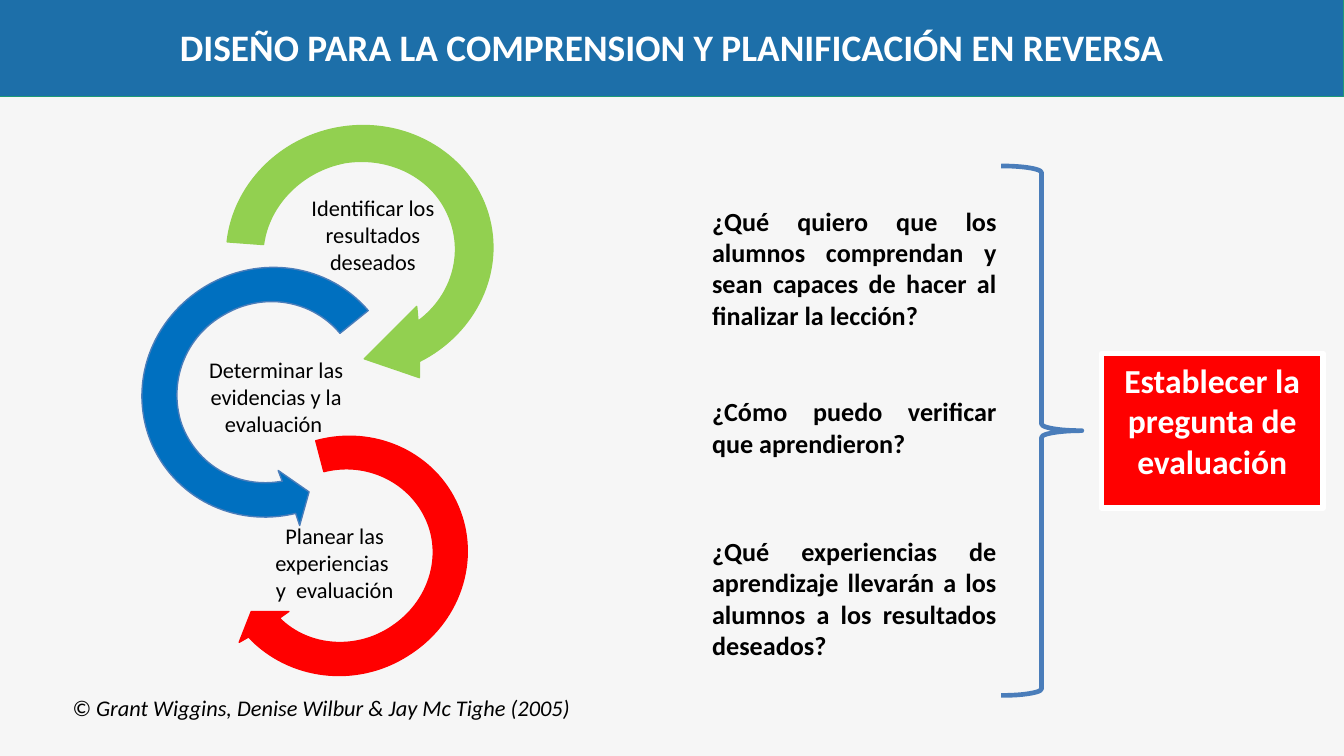
"""Build the slide on backward design: three linked arrows, their questions and the evaluation prompt."""
from dataclasses import dataclass
from math import cos, radians, sin

from lxml.etree import SubElement
from pptx import Presentation
from pptx.dml.color import RGBColor
from pptx.enum.shapes import MSO_SHAPE
from pptx.enum.text import MSO_ANCHOR, PP_ALIGN
from pptx.oxml.ns import qn
from pptx.util import Inches, Pt


@dataclass(frozen=True)
class Theme:
    font: str = "Calibri"
    background: str = "F6F6F6"
    ink: str = "000000"
    white: str = "FFFFFF"
    green: str = "92D050"
    blue: str = "0070C0"
    red: str = "FF0000"
    outline: str = "4A7DBA"
    header: str = "1D6FA9"
    header_edge: str = "1D9A78"
    small: int = 12
    medium: int = 14
    large: int = 18
    title: int = 20


THEME = Theme()
CELL = Inches(0.1)
COLUMNS, ROWS = 100, 56.25

TITLE = "DISEÑO PARA LA COMPRENSION Y PLANIFICACIÓN EN REVERSA"
PROMPT = "Establecer la pregunta de evaluación"
CREDIT = "© Grant Wiggins, Denise Wilbur & Jay Mc Tighe (2005)"
STAGES = [
    ("Identificar los resultados deseados", (21, 13.95, 13.5, 7.5)),
    ("Determinar las evidencias y la evaluación ", (13.8, 26, 13.5, 6.8)),
    ("Planear las experiencias  y  evaluación ", (19.4, 38.35, 11, 8.2)),
]
QUESTION_LEFT, QUESTION_WIDTH = 52, 23.15
QUESTIONS = [
    ("¿Qué quiero que los alumnos comprendan y sean capaces de hacer al finalizar la lección?", 14.75, 9.8),
    ("¿Cómo puedo verificar que aprendieron?", 28.95, 5.3),
    ("¿Qué experiencias de aprendizaje llevarán a los alumnos a los resultados deseados?", 39.35, 9.8),
]
# Pairs are corners; six numbers are two curve handles and an end point.
GREEN_ARROW = (THEME.green, THEME.green, (16.1, 7.4, 21.2, 22.6), 76.6, [
    (16.9, 18), (17.4, 13.5, 21.2, 9.9, 25.9, 9.4), (30.6, 8.9, 35, 11.6, 36.3, 15.9),
    (37.6, 20.2, 35.4, 24.8, 31.2, 26.9), (31.2, 28.1), (27.1, 26.7), (31, 22.8), (31.1, 23.9),
    (33.7, 22, 34.6, 18.7, 33.3, 15.9), (32.1, 13.2, 29, 11.6, 25.7, 12.1),
    (22.5, 12.7, 20, 15.2, 19.6, 18.2)])
BLUE_ARROW = (THEME.blue, THEME.outline, (9.9, 18.7, 20.3, 21), 239.7, [
    (27.4, 23.1), (24.4, 19.6, 19.3, 18.9, 15.3, 21.3), (11.3, 23.7, 9.5, 28.5, 11.2, 32.8),
    (12.9, 37, 17.4, 39.3, 22, 38.2), (22.3, 39.1), (23, 36.6), (20.7, 35), (21, 35.8),
    (17.7, 36.4, 14.6, 34.6, 13.5, 31.5), (12.5, 28.4, 13.8, 25, 16.7, 23.4),
    (19.6, 21.7, 23.2, 22.3, 25.3, 24.8)])
RED_ARROW = (THEME.red, THEME.red, (15.3, 31.6, 20.4, 19.4), 336.2, [
    (23.5, 32.8), (27.9, 31.6, 32.4, 33.7, 34.1, 37.7), (35.8, 41.7, 34.2, 46.4, 30.3, 48.8),
    (26.5, 51.2, 21.5, 50.6, 18.5, 47.4), (17.8, 47.8), (18.7, 45.5), (21.5, 45.5), (20.8, 46),
    (23, 48.2, 26.6, 48.4, 29.2, 46.6), (31.9, 44.8, 33, 41.4, 31.7, 38.6),
    (30.4, 35.8, 27.2, 34.3, 24.1, 35.1)])


def grid(*cells):
    return [round(value * CELL) for value in cells]


def write(box, text, size=THEME.small, color=THEME.ink, align=PP_ALIGN.CENTER,
          anchor=MSO_ANCHOR.TOP, bold=False, italic=False):
    frame = box.text_frame
    frame.word_wrap = True
    frame.vertical_anchor = anchor
    para = frame.paragraphs[0]
    para.alignment = align
    span = para.add_run()
    span.text = text
    font = span.font
    font.name, font.size, font.bold, font.italic = THEME.font, Pt(size), bold, italic
    font.color.rgb = RGBColor.from_string(color)


def paint(shape, fill, line, width):
    shape.shadow.inherit = False
    if fill:
        shape.fill.solid()
        shape.fill.fore_color.rgb = RGBColor.from_string(fill)
    else:
        shape.fill.background()
    shape.line.color.rgb = RGBColor.from_string(line)
    shape.line.width = Pt(width)
    return shape


def unturn(x, y, area, angle):
    left, top, width, height = area
    across, down = x - left - width / 2, y - top - height / 2
    cosine, sine = cos(radians(angle)), sin(radians(angle))
    return grid(across * cosine + down * sine + width / 2, down * cosine - across * sine + height / 2)


def draw_arrow(shapes, fill, line, area, angle, outline):
    steps = [[unturn(*step[i:i + 2], area, angle) for i in range(0, len(step), 2)] for step in outline]
    builder = shapes.build_freeform(*steps[0][-1], scale=1.0)
    builder.add_line_segments([step[-1] for step in steps[1:]], close=True)
    arrow = paint(builder.convert_to_shape(), fill, line, 0.75)
    arrow.left, arrow.top, arrow.width, arrow.height = grid(*area)
    arrow.rotation = angle

    contour = next(arrow.element.iter(qn("a:path")))
    for child in list(contour):
        contour.remove(child)
    contour.set("w", str(arrow.width))
    contour.set("h", str(arrow.height))
    for index, step in enumerate(steps):
        tag = "a:moveTo" if index == 0 else "a:cubicBezTo" if len(step) == 3 else "a:lnTo"
        segment = SubElement(contour, qn(tag))
        for x, y in step:
            SubElement(segment, qn("a:pt"), x=str(x), y=str(y))
    SubElement(contour, qn("a:close"))


def main():
    deck = Presentation()
    deck.slide_width, deck.slide_height = grid(COLUMNS, ROWS)
    page = deck.slides.add_slide(deck.slide_layouts[6])
    page.background.fill.solid()
    page.background.fill.fore_color.rgb = RGBColor.from_string(THEME.background)
    shapes = page.shapes

    draw_arrow(shapes, *GREEN_ARROW)
    draw_arrow(shapes, *BLUE_ARROW)
    for text, area in STAGES:
        write(shapes.add_textbox(*grid(*area)), text)
    for text, top, height in QUESTIONS:
        box = shapes.add_textbox(*grid(QUESTION_LEFT, top, QUESTION_WIDTH, height))
        write(box, text, size=THEME.medium, align=PP_ALIGN.JUSTIFY, bold=True)
    write(shapes.add_textbox(*grid(4.4, 51.15, 60.3, 3)), CREDIT, align=PP_ALIGN.LEFT, italic=True)

    brace = shapes.add_shape(MSO_SHAPE.RIGHT_BRACE, *grid(74.5, 12.35, 6, 39.4))
    brace.adjustments[0] = 0.083
    paint(brace, None, THEME.outline, 2.5)

    prompt = shapes.add_shape(MSO_SHAPE.RECTANGLE, *grid(81.95, 26.3, 16.5, 11.5))
    write(paint(prompt, THEME.red, THEME.white, 3), PROMPT, size=THEME.large, color=THEME.white, bold=True)
    draw_arrow(shapes, *RED_ARROW)

    header = shapes.add_shape(MSO_SHAPE.RECTANGLE, *grid(0, -0.3, COLUMNS, 7.5))
    write(paint(header, THEME.header, THEME.header_edge, 0.5), TITLE, size=THEME.title,
          color=THEME.white, anchor=MSO_ANCHOR.MIDDLE, bold=True)
    deck.save("out.pptx")


if __name__ == "__main__":
    main()
